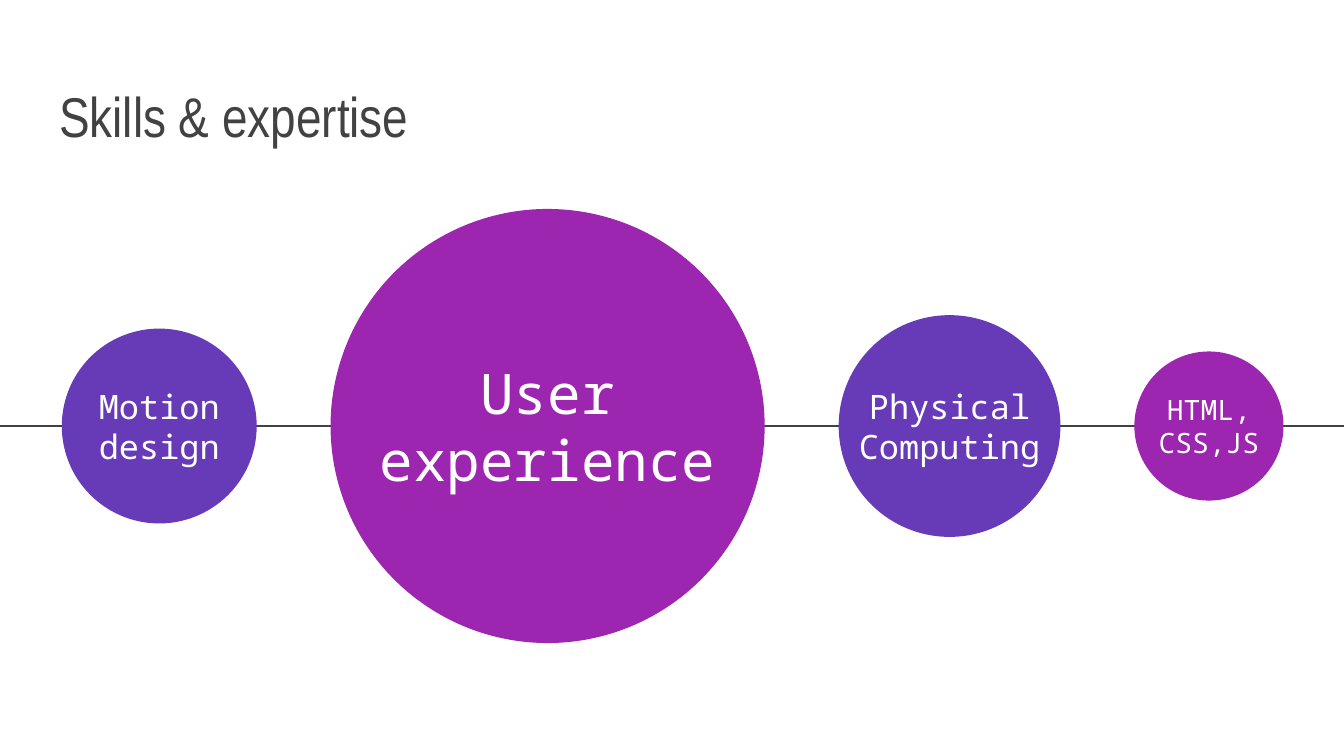
import pptx
import pptx.util
import pptx.dml.color
import pptx.enum.shapes
import pptx.enum.text
import pptx.oxml
from pptx.util import Inches

COLORS = {"text": "424242", "purple": "673AB7", "magenta": "9C26B0", "white": "FFFFFF"}


def rgb(name):
    return pptx.dml.color.RGBColor.from_string(COLORS[name])


def format_text(frame, font_name, size, color, anchor, align):
    frame.word_wrap = True
    frame.auto_size = pptx.enum.text.MSO_AUTO_SIZE.NONE
    frame.vertical_anchor = anchor
    frame.margin_left = frame.margin_right = Inches(0.1)
    frame.margin_top = frame.margin_bottom = Inches(0.1)
    paragraph = frame.paragraphs[0]
    paragraph.alignment = align
    paragraph.line_spacing = 1.0
    paragraph.space_before = pptx.util.Pt(0)
    font = paragraph.runs[0].font
    font.name = font_name
    font.size = pptx.util.Pt(size)
    font.color.rgb = rgb(color)


# Widescreen slide, 16:9
presentation = pptx.Presentation()
presentation.slide_width = Inches(10)
presentation.slide_height = Inches(10 * 9 / 16)
slide = presentation.slides.add_slide(presentation.slide_layouts[5])
slide.background.fill.solid()
slide.background.fill.fore_color.rgb = rgb("white")

# Line through the centres of all circles
axis_y = 3.17
axis = slide.shapes.add_connector(
    pptx.enum.shapes.MSO_CONNECTOR.STRAIGHT,
    Inches(-0.01), Inches(axis_y), Inches(10), Inches(axis_y))
axis.line.color.rgb = rgb("text")
axis.line.width = pptx.util.Pt(1.5)
axis._element.spPr.append(pptx.oxml.parse_xml(
    '<a:effectLst xmlns:a="http://schemas.openxmlformats.org/drawingml/2006/main"/>'))

# Title
heading = slide.shapes.title
heading.left, heading.top = Inches(0.34), Inches(0.41)
heading.width, heading.height = Inches(9.32), Inches(0.8)
heading.text_frame.text = "Skills & expertise"
format_text(heading.text_frame, "Arial Narrow", 30, "text",
            pptx.enum.text.MSO_ANCHOR.BOTTOM, pptx.enum.text.PP_ALIGN.LEFT)

# Skill circles: label, diameter, font size, fill
skills = [
    ("Motion design", 1.45, 18, "purple"),
    ("User experience", 3.23, 30, "magenta"),
    ("Physical Computing", 1.65, 18, "purple"),
    ("HTML, CSS,JS", 1.11, 15, "magenta"),
]
gap = 0.55
label_height = 0.66
left = 0.46
for skill, diameter, size, color in skills:
    circle = slide.shapes.add_shape(
        pptx.enum.shapes.MSO_SHAPE.OVAL, Inches(left), Inches(axis_y - diameter / 2),
        Inches(diameter), Inches(diameter))
    circle.shadow.inherit = False
    circle.fill.solid()
    circle.fill.fore_color.rgb = rgb(color)
    circle.line.fill.background()

    label = slide.shapes.add_textbox(
        Inches(left), Inches(axis_y - label_height / 2),
        Inches(diameter), Inches(label_height))
    label.text_frame.text = skill
    format_text(label.text_frame, "Noto Sans Mono", size, "white",
                pptx.enum.text.MSO_ANCHOR.MIDDLE, pptx.enum.text.PP_ALIGN.CENTER)
    left += diameter + gap

presentation.save("out.pptx")
